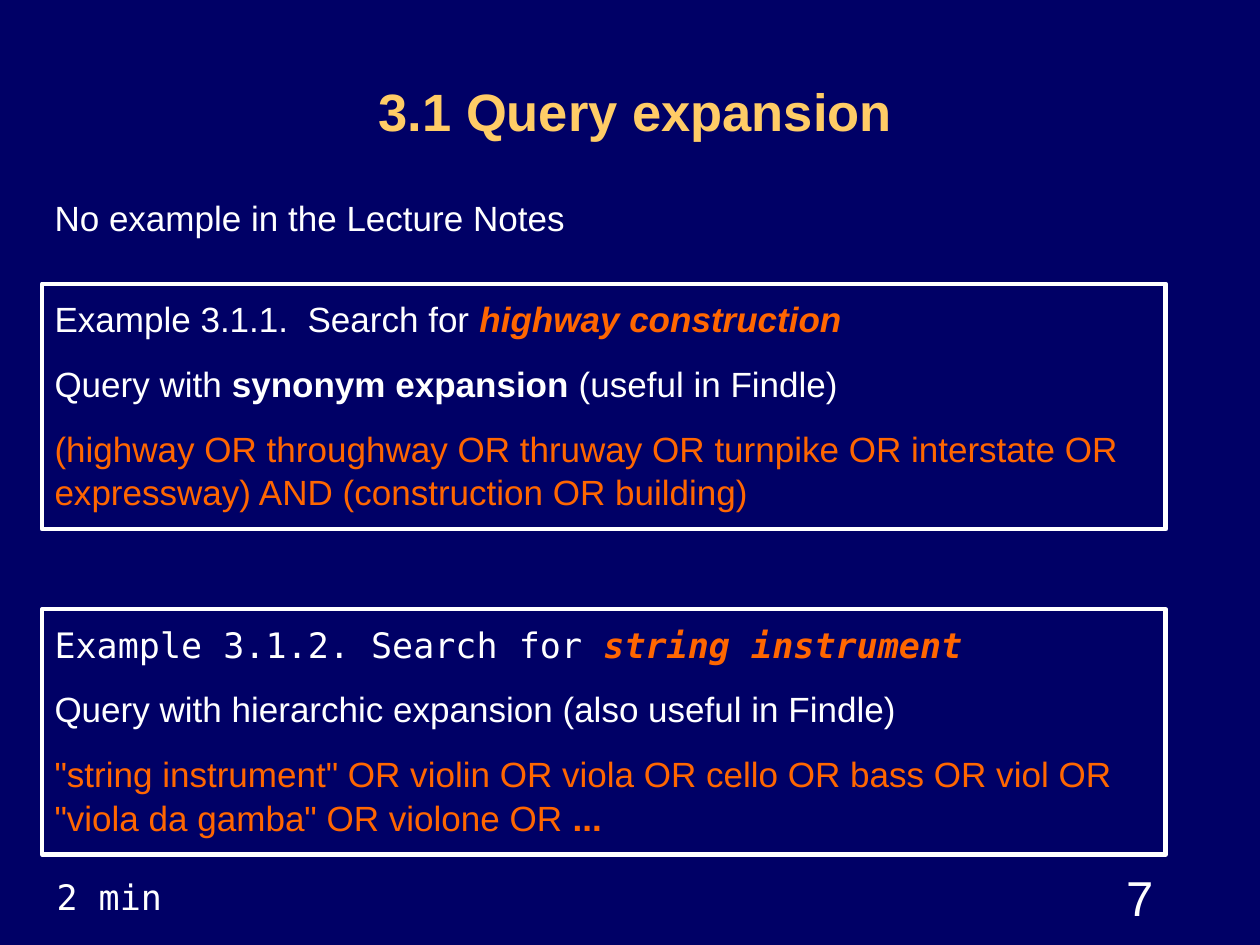
import pptx
import pptx.dml.color
import pptx.enum.shapes
import pptx.enum.text
import pptx.util

Cm, Pt = pptx.util.Cm, pptx.util.Pt
RGBColor = pptx.dml.color.RGBColor
ALIGN = pptx.enum.text.PP_ALIGN
ANCHOR = pptx.enum.text.MSO_ANCHOR

NAVY = RGBColor(0x00, 0x00, 0x66)
GOLD = RGBColor(0xFF, 0xCC, 0x66)
WHITE = RGBColor(0xFF, 0xFF, 0xFF)
ORANGE = RGBColor(0xFF, 0x66, 0x00)

PLAIN = {"name": "Arial", "size": Pt(20), "bold": False, "italic": False}
BOLD = {**PLAIN, "bold": True}
MONO = {**PLAIN, "name": "DejaVu Sans Mono"}
TERM = {"bold": True, "italic": True}


def write(box, lines, align=ALIGN.LEFT, anchor=ANCHOR.TOP, spacing=1.04):
    """Fill a box with paragraphs, each a list of (text, format, colour)."""
    frame = box.text_frame
    frame.word_wrap = True
    frame.vertical_anchor = anchor
    for number, spans in enumerate(lines):
        para = frame.add_paragraph() if number else frame.paragraphs[0]
        para.alignment = align
        para.line_spacing = spacing
        para.space_before = Pt(12 if number else 0)
        for text, style, color in spans:
            span = para.add_run()
            span.text = text
            for key, value in style.items():
                setattr(span.font, key, value)
            span.font.color.rgb = color


deck = pptx.Presentation()
deck.slide_width, deck.slide_height = Cm(25.4), Cm(19.05)
page = deck.slides.add_slide(deck.slide_layouts[5])
page.background.fill.solid()
page.background.fill.fore_color.rgb = NAVY

# Title
title = page.shapes.title
title.left, title.top, title.width, title.height = Cm(1.06), Cm(0.64), Cm(23.5), Cm(3.18)
write(title, [[("3.1 Query expansion", {**BOLD, "size": Pt(30)}, GOLD)]],
      ALIGN.CENTER, ANCHOR.MIDDLE, 1.0)

# Introductory line, duration and page number
intro = page.shapes.add_textbox(Cm(0.85), Cm(3.81), Cm(23.5), Cm(1.27))
write(intro, [[("No example in the Lecture Notes", PLAIN, WHITE)]])

duration = page.shapes.add_textbox(Cm(0.89), Cm(17.53), Cm(3.6), Cm(1.12))
write(duration, [[("2 min", MONO, WHITE)]], spacing=1.0)

page_number = page.shapes.add_textbox(Cm(18.2), Cm(17.36), Cm(5.3), Cm(1.27))
write(page_number, [[("7", {**PLAIN, "size": Pt(28)}, WHITE)]], ALIGN.RIGHT, spacing=1.0)

# Framed examples
examples = [
    (Cm(5.72), [
        [("Example 3.1.1.  Search for ", PLAIN, WHITE),
         ("highway construction", {**PLAIN, **TERM}, ORANGE)],
        [("Query with ", PLAIN, WHITE), ("synonym expansion", BOLD, WHITE),
         (" (useful in Findle)", PLAIN, WHITE)],
        [("(highway OR throughway OR thruway OR turnpike OR interstate OR "
          "expressway) AND (construction OR building)", PLAIN, ORANGE)],
    ]),
    (Cm(12.28), [
        [("Example 3.1.2. Search for ", MONO, WHITE),
         ("string instrument", {**MONO, **TERM}, ORANGE)],
        [("Query with hierarchic expansion (also useful in Findle)", PLAIN, WHITE)],
        [('"string instrument" OR violin OR viola OR cello OR bass OR viol OR '
          '"viola da gamba" OR violone OR ', PLAIN, ORANGE), ("...", BOLD, ORANGE)],
    ]),
]
for top, lines in examples:
    frame_box = page.shapes.add_shape(
        pptx.enum.shapes.MSO_SHAPE.RECTANGLE, Cm(0.85), top, Cm(22.65), Cm(4.95))
    frame_box.shadow.inherit = False
    frame_box.fill.background()
    frame_box.line.color.rgb = WHITE
    frame_box.line.width = Pt(2.5)
    for side in ("left", "top", "right", "bottom"):
        setattr(frame_box.text_frame, f"margin_{side}", Cm(0.25))
    write(frame_box, lines)

deck.save("out.pptx")
